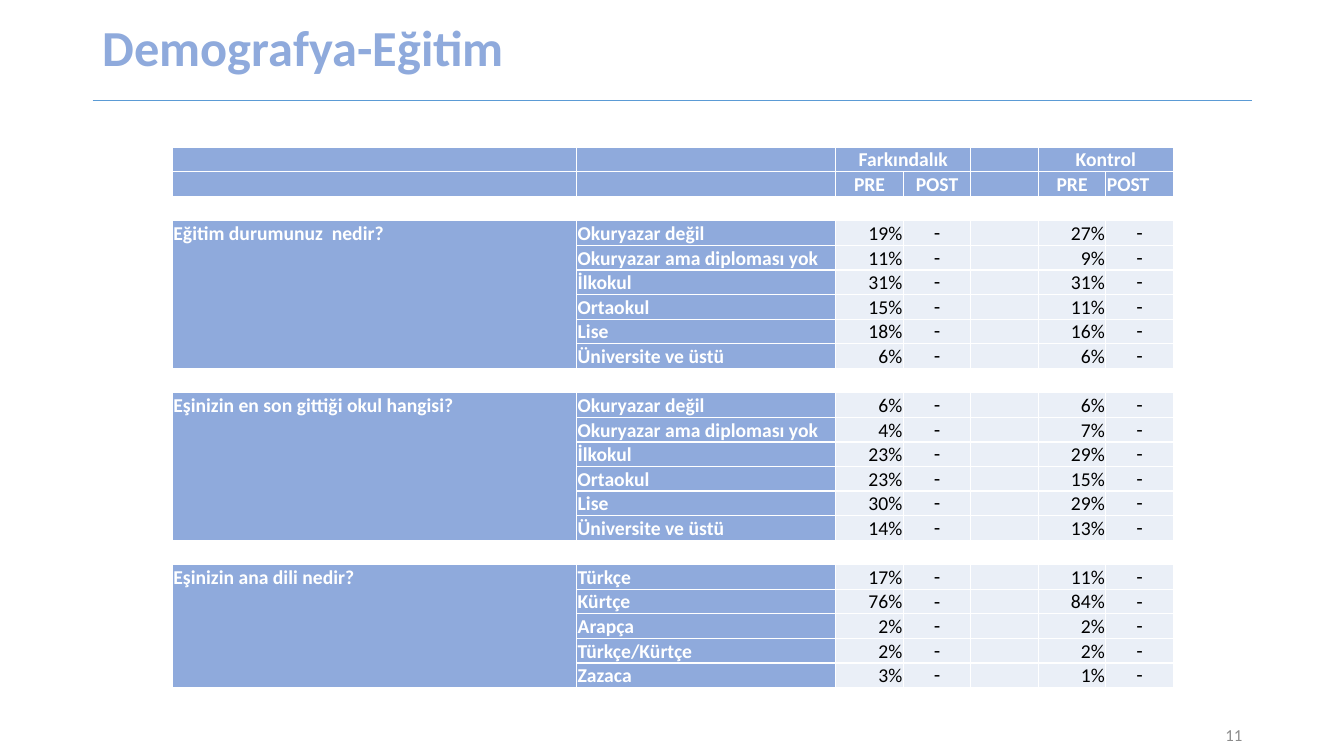
from lxml.etree import SubElement
from pptx import Presentation
from pptx.dml.color import RGBColor
from pptx.enum.shapes import MSO_CONNECTOR
from pptx.enum.text import MSO_ANCHOR as Anchor, PP_ALIGN as Align
from pptx.oxml.ns import qn
from pptx.util import Inches, Pt

HEADER_BLUE = RGBColor(0x8F, 0xAA, 0xDC)
RULE_BLUE = RGBColor(0x5B, 0x9B, 0xD5)
PALE_BLUE = RGBColor(0xEA, 0xEF, 0xF7)
GREY = RGBColor(0x8C, 0x8C, 0x8C)
WHITE = RGBColor(0xFF, 0xFF, 0xFF)
BLACK = RGBColor(0, 0, 0)

COLUMN_WIDTHS = [4.01, 2.57] + [0.67] * 5
ROW_HEIGHT = 0.24
PRE_COLUMNS = (2, 5)
POST_COLUMNS = (3, 6)

SCHOOLS = ["Okuryazar değil", "Okuryazar ama diploması yok", "İlkokul",
           "Ortaokul", "Lise", "Üniversite ve üstü"]
LANGUAGES = ["Türkçe", "Kürtçe", "Arapça", "Türkçe/Kürtçe", "Zazaca"]

# Question, answers, awareness group (%), control group (%)
QUESTIONS = [
    ("Eğitim durumunuz  nedir?", SCHOOLS,
     [19, 11, 31, 15, 18, 6], [27, 9, 31, 11, 16, 6]),
    ("Eşinizin en son gittiği okul hangisi?", SCHOOLS,
     [6, 4, 23, 23, 30, 14], [6, 7, 29, 15, 29, 13]),
    ("Eşinizin ana dili nedir?", LANGUAGES,
     [17, 76, 2, 2, 3], [11, 84, 2, 2, 1]),
]


def write_text(frame, text, size=14, font="Calibri", color=WHITE, bold=False,
               align=Align.LEFT, line_spacing=None):
    paragraph = frame.paragraphs[0]
    paragraph.alignment = align
    if line_spacing:
        paragraph.line_spacing = line_spacing
    run = paragraph.add_run()
    run.text = text
    run.font.size = Pt(size)
    run.font.name = font
    run.font.bold = bold
    run.font.color.rgb = color


class SlideBuilder:
    font = "Calibri"
    border_width = Pt(1)

    def __init__(self, presentation):
        self.slide = presentation.slides.add_slide(presentation.slide_layouts[6])

    def text_box(self, left, top, width, height, text, **text_format):
        shape = self.slide.shapes.add_textbox(
            Inches(left), Inches(top), Inches(width), Inches(height))
        frame = shape.text_frame
        frame.word_wrap = True
        frame.vertical_anchor = Anchor.MIDDLE
        write_text(frame, text, font=self.font, **text_format)

    def rule(self, left, right, top):
        connector = self.slide.shapes.add_connector(
            MSO_CONNECTOR.STRAIGHT, Inches(left), Inches(top), Inches(right), Inches(top))
        connector.line.color.rgb = RULE_BLUE
        connector.line.width = Pt(0.5)
        SubElement(connector._element.spPr, qn("a:effectLst"))

    def table(self, left, top, row_count):
        frame = self.slide.shapes.add_table(
            row_count, len(COLUMN_WIDTHS), Inches(left), Inches(top),
            Inches(sum(COLUMN_WIDTHS)), Inches(ROW_HEIGHT * row_count))
        table = frame.table
        table.first_row = table.horz_banding = False
        for column, width in zip(table.columns, COLUMN_WIDTHS):
            column.width = Inches(width)
        for row in table.rows:
            row.height = Inches(ROW_HEIGHT)
        return table

    def cell(self, cell, fill, text="", anchor=Anchor.TOP, **text_format):
        cell.margin_left = cell.margin_right = cell.margin_top = Inches(0.01)
        cell.margin_bottom = 0
        cell.vertical_anchor = anchor
        properties = cell._tc.get_or_add_tcPr()
        for side in ("a:lnL", "a:lnR", "a:lnT", "a:lnB"):
            line = SubElement(properties, qn(side), w=str(self.border_width))
            solid = SubElement(line, qn("a:solidFill"))
            SubElement(solid, qn("a:srgbClr"), val=str(WHITE))
        cell.fill.solid()
        cell.fill.fore_color.rgb = fill
        if text:
            write_text(cell.text_frame, text, **text_format)
        else:
            # The end mark keeps empty cells as low as filled ones
            SubElement(cell.text_frame.paragraphs[0]._p, qn("a:endParaRPr"), sz="1400")

    def header_row(self, table, row, labels, left_aligned=()):
        for column in range(len(COLUMN_WIDTHS)):
            align = Align.LEFT if column in left_aligned else Align.CENTER
            self.cell(table.cell(row, column), HEADER_BLUE, labels.get(column, ""),
                      anchor=Anchor.BOTTOM, bold=True, align=align)

    def spacer_row(self, table, row):
        for column in range(len(COLUMN_WIDTHS)):
            self.cell(table.cell(row, column), WHITE)

    def answer_row(self, table, row, question, answer, shares):
        self.cell(table.cell(row, 0), HEADER_BLUE, question, bold=True)
        self.cell(table.cell(row, 1), HEADER_BLUE, answer, bold=True)
        self.cell(table.cell(row, 4), PALE_BLUE)
        for column, share in zip(PRE_COLUMNS, shares):
            self.cell(table.cell(row, column), PALE_BLUE, f"{share}%",
                      color=BLACK, align=Align.RIGHT)
        for column in POST_COLUMNS:
            self.cell(table.cell(row, column), PALE_BLUE, "-", font="Arial",
                      color=BLACK, align=Align.CENTER)


def main():
    presentation = Presentation()
    presentation.slide_width = Inches(13.33)
    presentation.slide_height = Inches(7.5)
    builder = SlideBuilder(presentation)

    # Title, rule and page number
    builder.rule(0.92, 12.42, 1)
    builder.text_box(0.92, 0, 11.5, 1, "Demografya-Eğitim", size=36,
                     color=HEADER_BLUE, bold=True, line_spacing=0.9)
    builder.text_box(9.42, 7.09, 3, 0.4, "11", size=12, color=GREY, align=Align.RIGHT)

    # Table header
    row_count = 2 + sum(1 + len(answers) for _, answers, _, _ in QUESTIONS)
    table = builder.table(1.71, 1.46, row_count)
    builder.header_row(table, 0, {2: "Farkındalık", 5: "Kontrol"})
    builder.header_row(table, 1, {2: "PRE", 3: "POST", 5: "PRE", 6: "POST"},
                       left_aligned=(6,))
    for pre, post in zip(PRE_COLUMNS, POST_COLUMNS):
        table.cell(0, pre).merge(table.cell(0, post))

    # One block of answers for each question
    row = 2
    for question, answers, awareness, control in QUESTIONS:
        builder.spacer_row(table, row)
        first = row + 1
        for row, (answer, *shares) in enumerate(zip(answers, awareness, control), first):
            builder.answer_row(table, row, question if row == first else "", answer, shares)
        table.cell(first, 0).merge(table.cell(row, 0))
        row += 1

    presentation.save("out.pptx")


if __name__ == "__main__":
    main()
